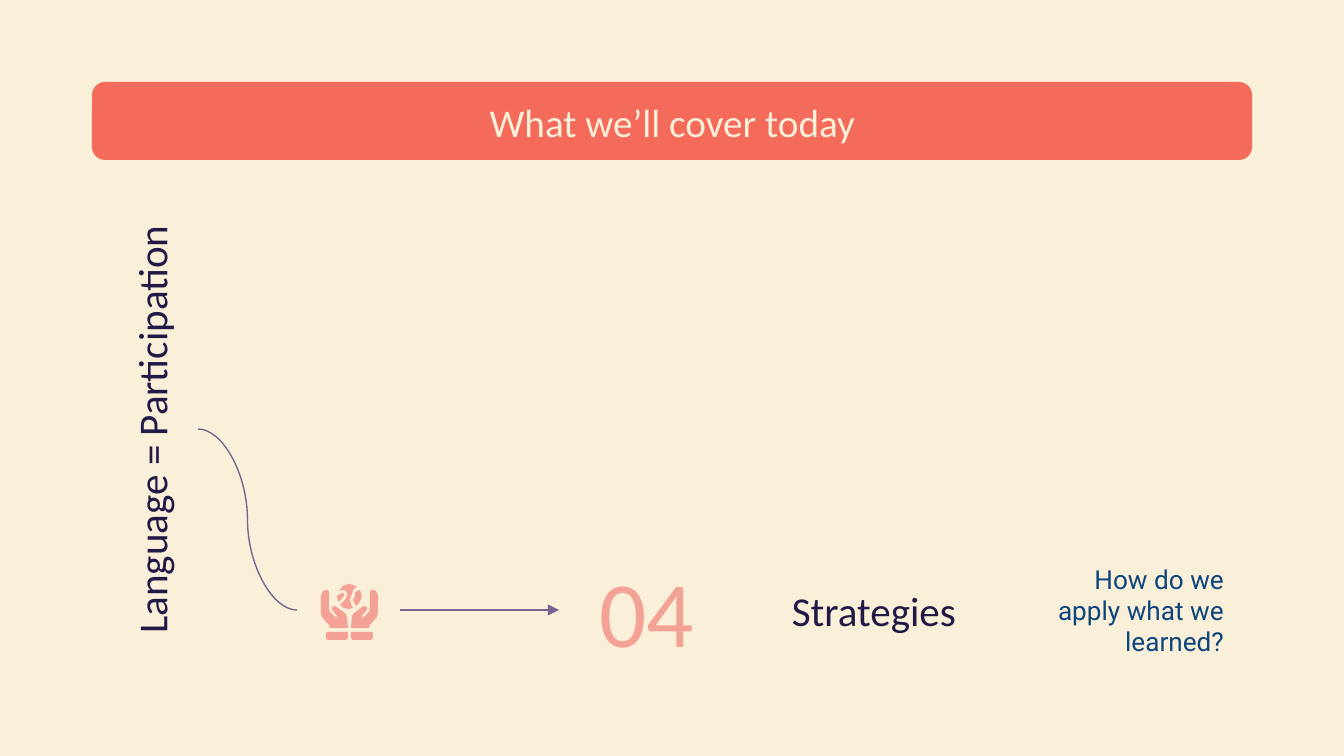
from dataclasses import dataclass

from lxml import etree
from pptx import Presentation, util as u
from pptx.dml.color import RGBColor
from pptx.enum import shapes, text
from pptx.oxml import ns

PX = 914400 / 134.4
HUES = {"cream": "FAEFD9", "coral": "F46B5C", "navy": "211A46",
        "blue": "0C467C", "rose": "F5A296", "plum": "756591"}
MID, RIGHT = text.PP_ALIGN.CENTER, text.PP_ALIGN.RIGHT
INSET = 13
ROW_TOP, ROW_TALL = 570, 80
ICON_LEFT, ICON_TOP, ICON_WIDE = 321, 584, 57


@dataclass
class Label:
    words: str
    box: tuple[int, int, int, int]
    size: int
    hue: str
    font: str = "Calibri"
    align: text.PP_ALIGN = MID
    turn: int = 0


@dataclass
class Link:
    kind: shapes.MSO_CONNECTOR
    ends: tuple[int, int, int, int]
    arrow: bool = False


LABELS = [
    Label("What we’ll cover today", (106, 79, 1133, 85), 21, "cream"),
    Label("How do we apply what we learned?", (1013, ROW_TOP, 224, ROW_TALL),
          14, "blue", "Roboto", RIGHT),
    Label("Strategies", (734, ROW_TOP, 280, ROW_TALL), 22, "navy"),
    Label("04", (559, ROW_TOP, 175, ROW_TALL), 50, "rose"),
    Label("Language = Participation", (-81, 383, 464, 93), 22, "navy", turn=270),
]

LINKS = [
    Link(shapes.MSO_CONNECTOR.STRAIGHT, (400, 610, 559, 610), arrow=True),
    Link(shapes.MSO_CONNECTOR.CURVE, (198, 429, 297, 610)),
]

Points = list[tuple[int, int]]

GLOBE: list[Points] = [
    [(22, 9), (19, 10), (16, 12), (17, 18), (20, 16), (23, 12), (23, 10)],
    [(28, 0), (22, 2), (18, 7), (22, 6), (25, 7), (26, 9), (26, 12), (24, 16),
     (20, 20), (19, 21), (23, 24), (28, 25), (32, 24), (30, 20), (29, 16),
     (30, 13), (31, 10), (32, 6), (34, 4), (36, 3), (32, 1)],
    [(39, 6), (36, 7), (34, 9), (34, 13), (32, 16), (35, 22), (39, 18),
     (41, 12)],
]
HAND: list[Points] = [
    [(5, 6), (2, 7), (0, 11), (0, 29), (1, 33), (5, 38), (8, 41), (9, 44),
     (27, 44), (26, 33), (25, 30), (22, 28), (17, 24), (14, 22), (11, 23),
     (11, 26), (16, 32), (16, 34), (14, 33), (9, 28), (8, 24), (8, 8), (7, 6)],
    [(7, 48), (5, 49), (5, 54), (7, 56), (25, 56), (27, 54), (27, 48)],
]


def emu(*px: int) -> list[int]:
    return [round(n * PX) for n in px]


def tint(hue: str) -> RGBColor:
    return RGBColor.from_string(HUES[hue])


def paint(shape, hue: str) -> None:
    """Fill a shape flat, with no outline or shadow."""
    shape.shadow.inherit = False
    shape.fill.solid()
    shape.fill.fore_color.rgb = tint(hue)
    shape.line.fill.background()


def put_bar(slide) -> None:
    bar = slide.shapes.add_shape(shapes.MSO_SHAPE.ROUNDED_RECTANGLE,
                                 *emu(92, 82, 1160, 78))
    paint(bar, "coral")


def put_label(slide, label: Label) -> None:
    box = slide.shapes.add_textbox(*emu(*label.box))
    box.rotation = label.turn
    frame = box.text_frame
    pad, = emu(INSET)
    look = {"word_wrap": True, "vertical_anchor": text.MSO_ANCHOR.MIDDLE,
            "margin_left": pad, "margin_right": pad,
            "margin_top": pad, "margin_bottom": pad}
    for name, value in look.items():
        setattr(frame, name, value)
    para = frame.paragraphs[0]
    para.alignment = label.align
    run = para.add_run()
    run.text = label.words
    for name, value in {"name": label.font, "size": u.Pt(label.size)}.items():
        setattr(run.font, name, value)
    run.font.color.rgb = tint(label.hue)


def put_link(slide, link: Link) -> None:
    line = slide.shapes.add_connector(link.kind, *emu(*link.ends))
    line.line.color.rgb = tint("plum")
    line.line.width = u.Pt(0.75)
    if link.arrow:
        etree.SubElement(line.line._get_or_add_ln(), ns.qn("a:tailEnd"),
                         type="triangle")
    etree.SubElement(line._element.spPr, ns.qn("a:effectLst"))


def put_icon(slide) -> None:
    """Draw a globe held by one hand and its mirror twin."""
    twin = [[(ICON_WIDE - x, y) for x, y in part] for part in HAND]
    for part in GLOBE + HAND + twin:
        pen = slide.shapes.build_freeform(*part[0], scale=PX)
        pen.add_line_segments(part[1:], close=True)
        paint(pen.convert_to_shape(*emu(ICON_LEFT, ICON_TOP)), "rose")


def main() -> None:
    deck = Presentation()
    deck.slide_width, deck.slide_height = emu(1344, 756)
    slide = deck.slides.add_slide(deck.slide_layouts[6])
    back = slide.background.fill
    back.solid()
    back.fore_color.rgb = tint("cream")
    put_bar(slide)
    for label in LABELS:
        put_label(slide, label)
    for link in LINKS:
        put_link(slide, link)
    put_icon(slide)
    deck.save("out.pptx")


if __name__ == "__main__":
    main()
